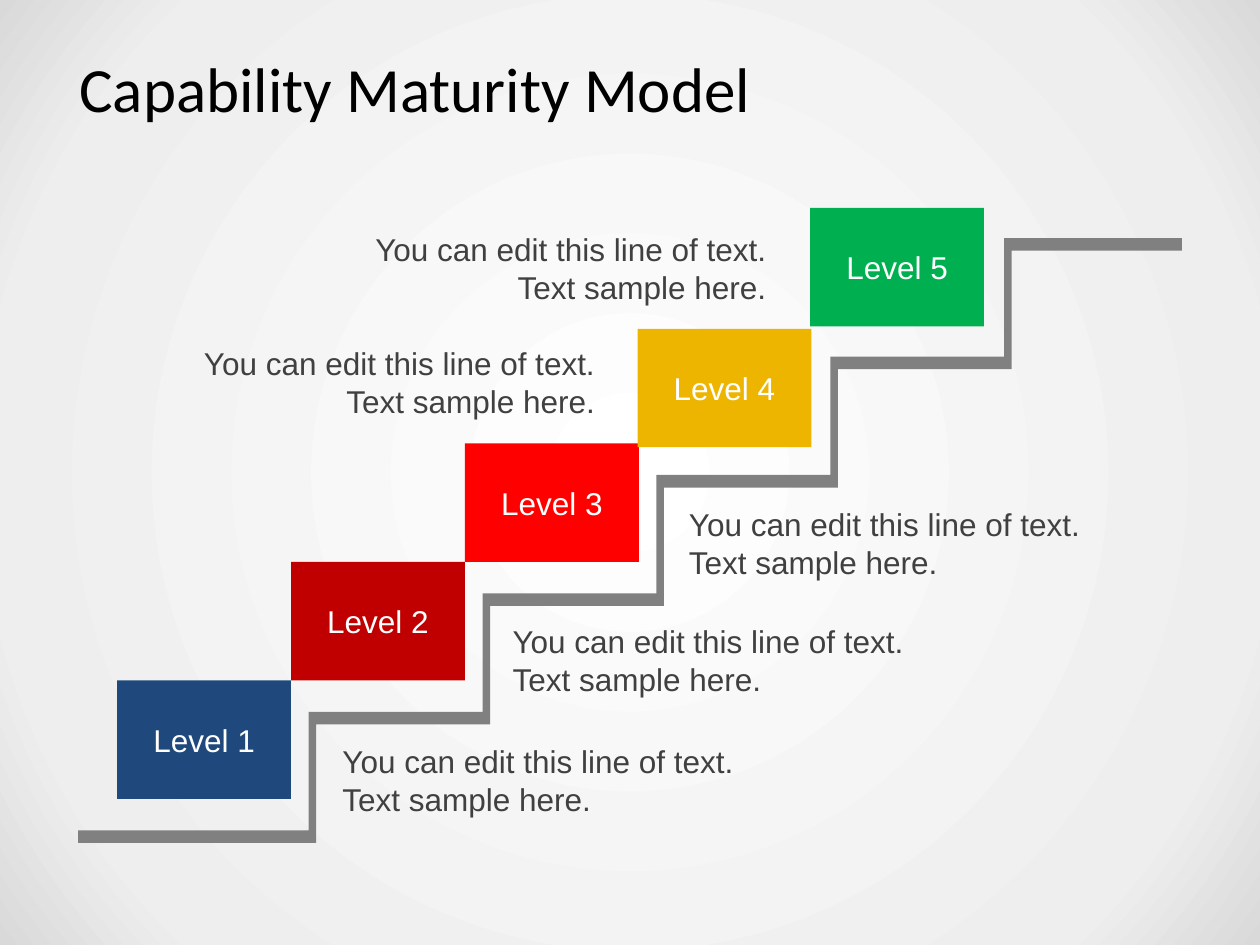
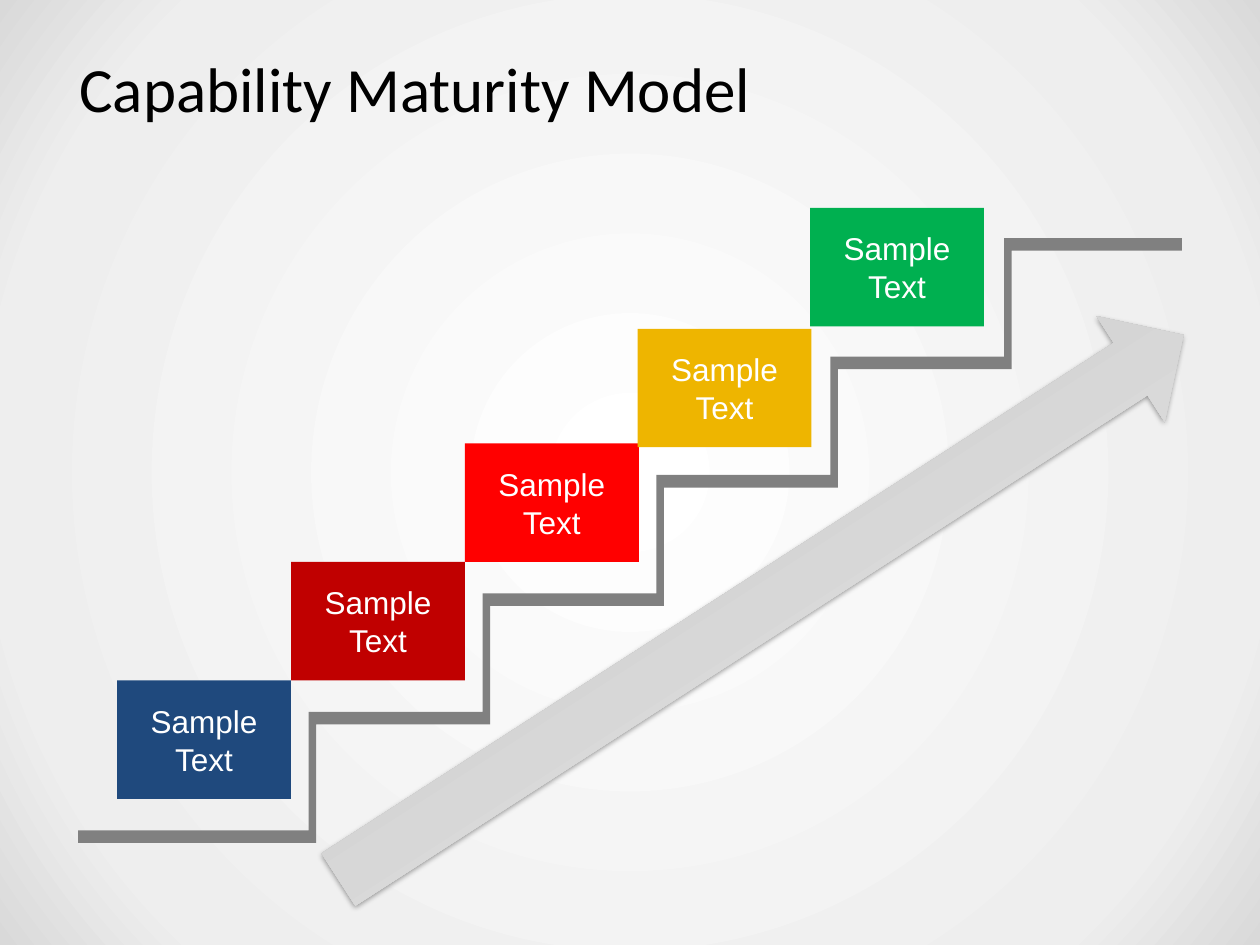
"""Builds two Capability Maturity Model staircase slides."""
from lxml import etree
from pptx import Presentation
from pptx.dml.color import RGBColor
from pptx.enum.shapes import MSO_SHAPE
from pptx.enum.text import MSO_ANCHOR, MSO_AUTO_SIZE, PP_ALIGN
from pptx.oxml import parse_xml
from pptx.oxml.ns import nsdecls, qn
from pptx.util import Inches, Pt

BLACK = RGBColor(0x00, 0x00, 0x00)
WHITE = RGBColor(0xFF, 0xFF, 0xFF)
TEXT_GREY = RGBColor(0x40, 0x40, 0x40)
STAIR_GREY = RGBColor(0x80, 0x80, 0x80)
BLUE = RGBColor(0x1F, 0x49, 0x7D)
DARK_RED = RGBColor(0xC0, 0x00, 0x00)
RED = RGBColor(0xFF, 0x00, 0x00)
GOLD = RGBColor(0xEE, 0xB5, 0x00)
GREEN = RGBColor(0x00, 0xB0, 0x50)
BG_STOPS = [(0, WHITE), (81, RGBColor(0xEE, 0xEE, 0xEE)), (100, RGBColor(0xD9, 0xD9, 0xD9))]
ARROW_STOPS = [(25, RGBColor(0xBD, 0xBD, 0xBD)), (35, RGBColor(0xD1, 0xD1, 0xD1)),
               (100, RGBColor(0xEE, 0xEE, 0xEE))]

TITLE = "Capability Maturity Model"
CAPTION = "You can edit this line of text. Text sample here."
BOXES = [(0.93, 5.4, BLUE), (2.31, 4.46, DARK_RED), (3.69, 3.52, RED),
         (5.06, 2.61, GOLD), (6.43, 1.65, GREEN)]
CAPTIONS = [(2.62, 5.84, 3.5, PP_ALIGN.LEFT), (3.97, 4.89, 3.5, PP_ALIGN.LEFT),
            (5.37, 3.96, 3.5, PP_ALIGN.LEFT), (1.5, 2.68, 3.32, PP_ALIGN.RIGHT),
            (2.86, 1.78, 3.32, PP_ALIGN.RIGHT)]
LABELS = [[f"Level {n}" for n in range(1, 6)], ["Sample Text"] * 5]
STEP_X, STEP_Y = 1.38, 0.94


def set_gradient(fill, stops, direction):
    fill.gradient()
    grad = fill._fill._gradFill
    for child in list(grad):
        grad.remove(child)
    gs = "".join(f'<a:gs pos="{pos * 1000}"><a:srgbClr val="{color}"/></a:gs>'
                 for pos, color in stops)
    block = parse_xml(f'<a:gradFill {nsdecls("a")}><a:gsLst>{gs}</a:gsLst>{direction}</a:gradFill>')
    grad.extend(list(block))


def write(shape, text, size, font, color, align):
    tf = shape.text_frame
    tf.word_wrap = True
    tf.text = text
    p = tf.paragraphs[0]
    p.alignment = align
    r = p.runs[0]
    r.font.size, r.font.name, r.font.color.rgb = Pt(size), font, color
    return tf


prs = Presentation()
prs.slide_width, prs.slide_height = Inches(10), Inches(7.5)
set_gradient(prs.slide_master.background.fill, BG_STOPS,
             '<a:path path="circle"><a:fillToRect l="50000" t="50000" r="50000" b="50000"/></a:path>')

upper, lower = [(0.62, 6.59)], [(0.62, 6.69)]
for k in range(5):
    x = 2.45 + STEP_X * k
    for y in (6.59 - STEP_Y * k, 6.59 - STEP_Y * (k + 1)):
        upper.append((x, y))
        lower.append((x + 0.06, y + 0.1))
upper.append((9.38, 1.89))
lower.append((9.38, 1.99))
outline = [(Inches(x), Inches(y)) for x, y in upper + lower[::-1]]

for labels in LABELS:
    s = prs.slides.add_slide(prs.slide_layouts[6])
    title = s.shapes.add_textbox(Inches(0.5), Inches(0.3), Inches(9), Inches(0.78))
    tf = write(title, TITLE, 36, "Calibri", BLACK, PP_ALIGN.LEFT)
    tf.vertical_anchor = MSO_ANCHOR.MIDDLE
    tf.margin_left = tf.margin_right = Inches(0.13)
    tf.margin_top = tf.margin_bottom = Inches(0.07)

    for (x, y, color), label in zip(BOXES, labels):
        box = s.shapes.add_shape(MSO_SHAPE.RECTANGLE, Inches(x), Inches(y),
                                 Inches(1.38), Inches(0.94))
        box.shadow.inherit = False
        box.fill.solid()
        box.fill.fore_color.rgb = color
        box.line.fill.background()
        tf = write(box, label, 18, "Arial", WHITE, PP_ALIGN.CENTER)
        tf.vertical_anchor = MSO_ANCHOR.MIDDLE

    builder = s.shapes.build_freeform(*outline[0])
    builder.add_line_segments(outline[1:], close=True)
    stairs = builder.convert_to_shape()
    stairs.shadow.inherit = False
    stairs.fill.solid()
    stairs.fill.fore_color.rgb = STAIR_GREY
    stairs.line.fill.background()

for x, y, width, align in CAPTIONS:
    caption = prs.slides[0].shapes.add_textbox(Inches(x), Inches(y), Inches(width), Inches(0.71))
    tf = write(caption, CAPTION, 18, "Arial", TEXT_GREY, align)
    tf.auto_size = MSO_AUTO_SIZE.SHAPE_TO_FIT_TEXT

arrow = prs.slides[1].shapes.add_shape(MSO_SHAPE.UP_ARROW, Inches(5.54), Inches(0.83),
                                       Inches(1), Inches(7.98))
arrow.rotation = 57.2
arrow.adjustments[0], arrow.adjustments[1] = 0.495, 0.5
set_gradient(arrow.fill, ARROW_STOPS, '<a:lin ang="0" scaled="0"/>')
arrow.line.fill.background()
arrow.shadow.inherit = False
effects = arrow._element.spPr.find(qn("a:effectLst"))
shadow = etree.SubElement(effects, qn("a:outerShdw"), blurRad=str(Pt(3.1)), dist=str(Pt(1.6)),
                          dir="5400000", algn="t", rotWithShape="0")
shade = etree.SubElement(shadow, qn("a:srgbClr"), val=str(BLACK))
etree.SubElement(shade, qn("a:alpha"), val="38000")

prs.save("out.pptx")
